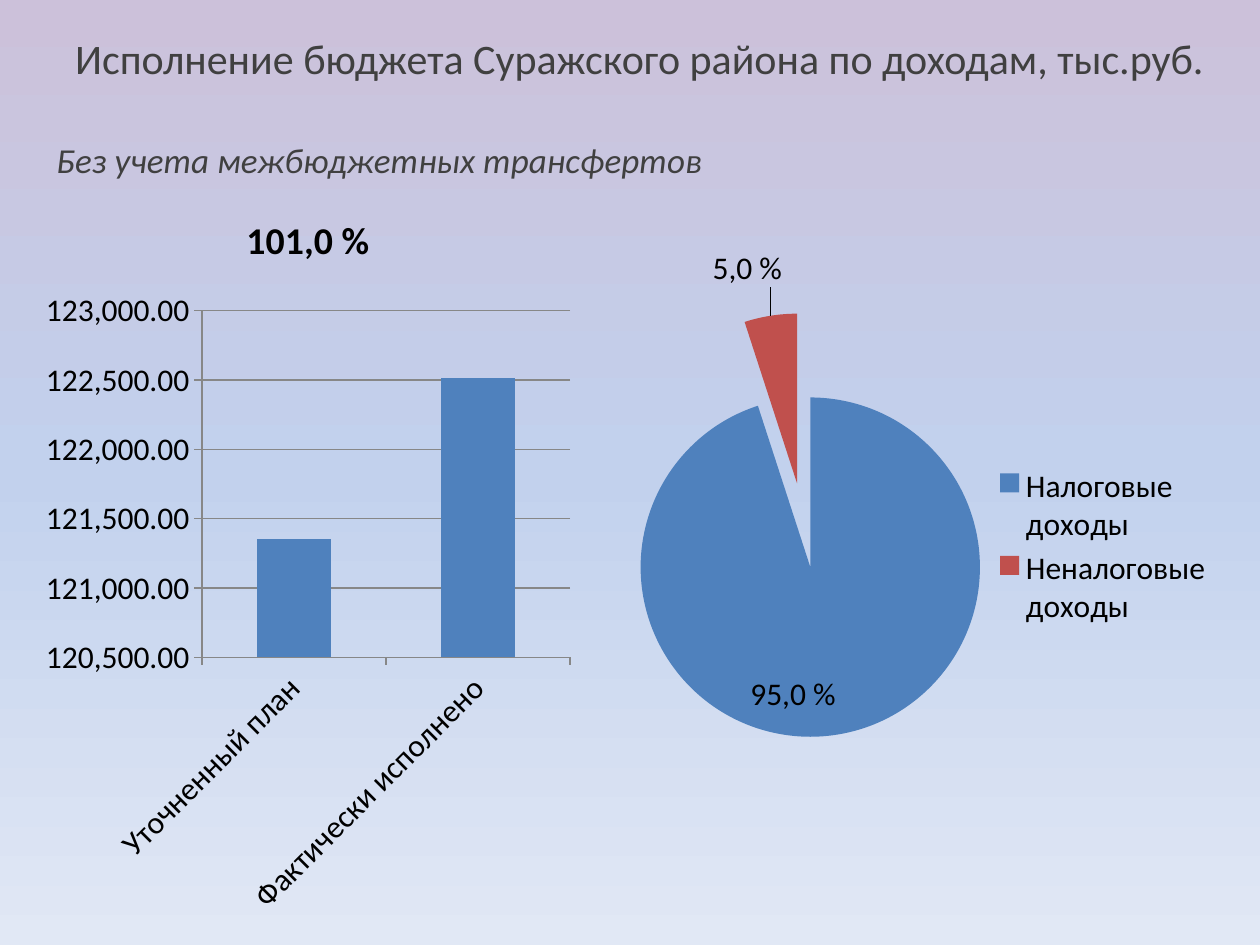
from copy import deepcopy

from lxml import etree
from pptx import Presentation
from pptx import util as u
from pptx.chart.data import CategoryChartData
from pptx.dml.color import RGBColor
from pptx.enum import chart as charts, text
from pptx.oxml import parse_xml
from pptx.oxml.ns import nsdecls, qn

SCALE = 914400 / 126
FONT = "Calibri"
BLUE, RED, BLACK, GREY, AXIS = "4F81BD", "C0504D", "000000", "404040", "878787"
BACKGROUND = [(0, "CCC1DA"), (0.5, "C2D1ED"), (1, "E1E8F5")]


def px(*lengths):
    """Turn pixel lengths into EMU."""
    return [u.Emu(round(length * SCALE)) for length in lengths]


def color(value):
    """Return the colour of a hex string."""
    return RGBColor.from_string(value)


def set_font(font, size=18, fill=BLACK, bold=False, italic=False):
    """Format a font."""
    font.name, font.size, font.bold, font.italic = FONT, u.Pt(size), bold, italic
    font.color.rgb = color(fill)


def write(paragraph, wording, align=None, before=0, **style):
    """Write one formatted run into a paragraph."""
    run = paragraph.add_run()
    run.text = wording
    paragraph.space_before = u.Pt(before)
    if align is not None:
        paragraph.alignment = align
    set_font(run.font, **style)


def paint_background(slide):
    """Fill the slide with a vertical gradient of three stops."""
    fill = slide.background.fill
    fill.gradient()
    fill.gradient_angle = 270
    stops = slide._element.find(".//" + qn("a:gsLst"))
    stops.append(deepcopy(stops[-1]))
    for stop, (position, value) in zip(fill.gradient_stops, BACKGROUND):
        stop.position = position
        stop.color.rgb = color(value)


def add_heading(slide):
    """Add the title and the subtitle in one text box."""
    frame = slide.shapes.add_textbox(*px(44, 26, 1191, 59)).text_frame
    frame.word_wrap = True
    write(frame.paragraphs[0], "Исполнение бюджета Суражского района по доходам, тыс.руб.",
          align=text.PP_ALIGN.CENTER, size=24, fill=GREY)
    write(frame.add_paragraph(), "Без учета межбюджетных трансфертов",
          align=text.PP_ALIGN.LEFT, before=32, size=20, fill=GREY, italic=True)


def add_chart(slide, kind, box, values):
    """Add a chart of one series and return it."""
    data = CategoryChartData()
    data.categories = list(values)
    data.add_series("Series 1", list(values.values()))
    chart = slide.shapes.add_chart(kind, *px(*box), data).chart
    set_font(chart.font)
    chart.has_legend = False
    chart.has_title = False
    return chart


def set_layout(parent, index, **fractions):
    """Insert a manual layout into a chart element."""
    for old in parent.findall(qn("c:layout")):
        parent.remove(old)
    layout = parse_xml(f"<c:layout {nsdecls('c')}><c:manualLayout/></c:layout>")
    for name, value in fractions.items():
        etree.SubElement(layout[0], qn(f"c:{name}")).set("val", str(value))
    parent.insert(index, layout)


def add_income_columns(slide):
    """Add the column chart of planned and actual income."""
    chart = add_chart(slide, charts.XL_CHART_TYPE.COLUMN_STACKED, (35, 185, 546, 745),
                      {"Уточненный план": 121350, "Фактически исполнено": 122510})
    write(chart.chart_title.text_frame.paragraphs[0], "101,0 %", size=21.6, bold=True)
    chart.chart_title.include_in_layout = False
    plot = chart.plots[0]
    plot.gap_width, plot.overlap, plot.vary_by_categories = 150, 100, False
    fill = plot.series[0].format.fill
    fill.solid()
    fill.fore_color.rgb = color(BLUE)
    values, categories = chart.value_axis, chart.category_axis
    values.minimum_scale, values.maximum_scale, values.major_unit = 120500, 123000, 500
    values.tick_labels.number_format = "#,##0.00"
    values.tick_labels.number_format_is_linked = False
    values.has_major_gridlines = True
    for axis in (values, categories):
        axis.major_tick_mark = charts.XL_TICK_MARK.OUTSIDE
        axis.format.line.color.rgb = color(AXIS)
        set_font(axis.tick_labels.font)
    values.major_gridlines.format.line.color.rgb = color(AXIS)
    categories._element.find(".//" + qn("a:bodyPr")).set("rot", "-2700000")


def add_income_pie(slide):
    """Add the exploded pie of tax and non-tax income."""
    chart = add_chart(slide, charts.XL_CHART_TYPE.PIE, (591, 193, 635, 707),
                      {"Налоговые доходы": 95, "Неналоговые доходы": 5})
    chart.has_legend = True
    chart.legend.position = charts.XL_LEGEND_POSITION.RIGHT
    chart.legend.include_in_layout = False
    set_font(chart.legend.font)
    plot_area = chart._chartSpace.find(".//" + qn("c:plotArea"))
    set_layout(plot_area, 0, layoutTarget="inner", xMode="edge", yMode="edge",
               x=0, y=0.17, w=0.67, h=0.6)
    plot = chart.plots[0]
    plot.vary_by_categories = True
    series = plot.series[0]
    place = charts.XL_LABEL_POSITION
    slices = [(BLUE, "95,0 %", place.INSIDE_END, 0, -0.02),
              (RED, "5,0 %", place.OUTSIDE_END, 0.02, -0.03)]
    for index, (value, wording, position, x, y) in enumerate(slices):
        point = series.points[index]
        point.format.fill.solid()
        point.format.fill.fore_color.rgb = color(value)
        label = point.data_label
        write(label.text_frame.paragraphs[0], wording)
        label.position = position
        set_layout(series._element.findall(".//" + qn("c:dLbl"))[index], 1, x=x, y=y)
    series.data_labels.show_value = True
    leader = series._element.find(".//" + qn("c:showLeaderLines"))
    if leader is not None:
        leader.set("val", "1")
    explosion = parse_xml(f'<c:explosion {nsdecls("c")} val="25"/>')
    series._element.find(qn("c:dPt")).addprevious(explosion)


def main():
    """Build and save the slide."""
    presentation = Presentation()
    presentation.slide_width, presentation.slide_height = px(1260, 945)
    slide = presentation.slides.add_slide(presentation.slide_layouts[6])
    paint_background(slide)
    add_heading(slide)
    add_income_columns(slide)
    add_income_pie(slide)
    presentation.save("out.pptx")


if __name__ == "__main__":
    main()
